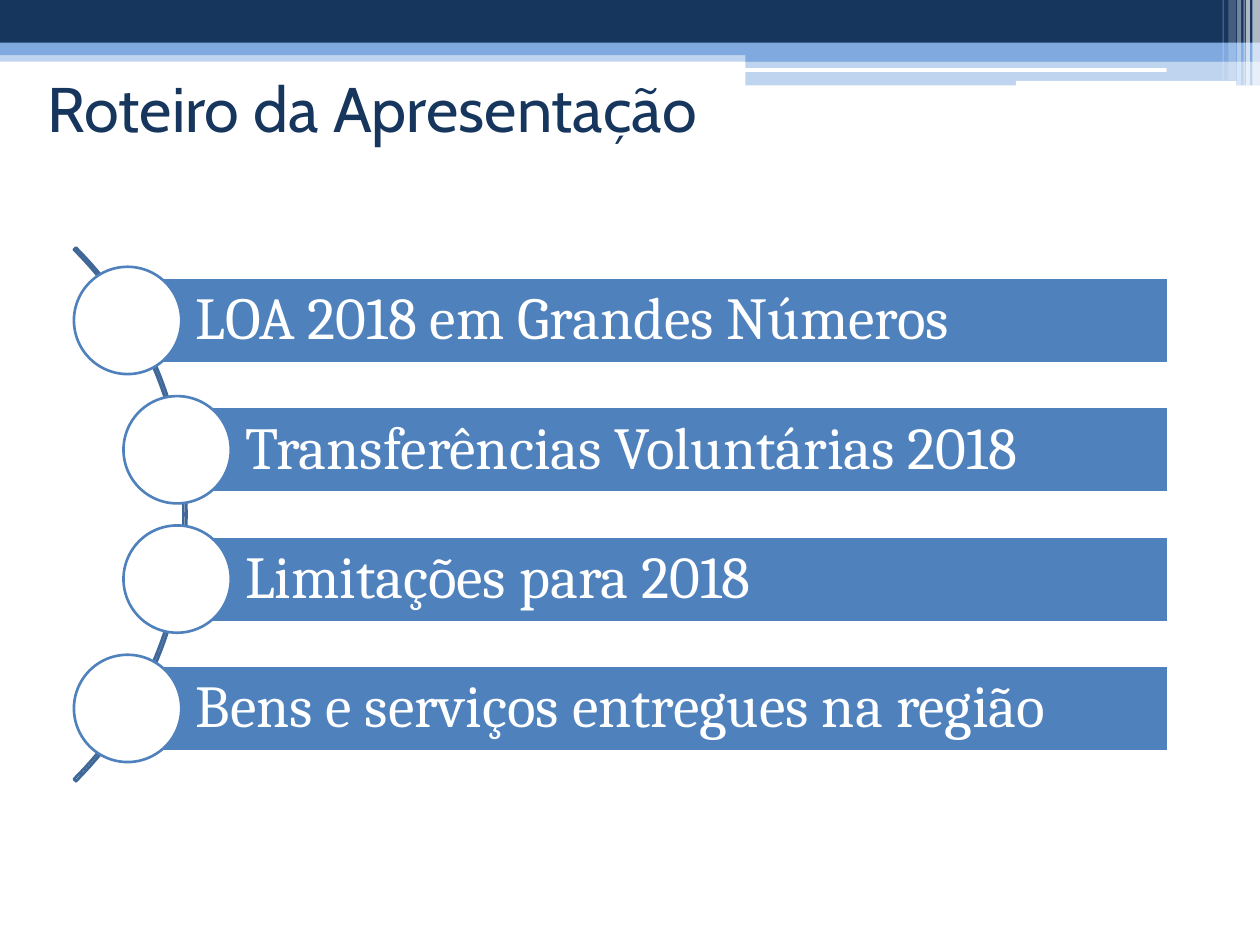
from dataclasses import dataclass

import lxml.etree
import pptx
import pptx.dml.color
import pptx.enum.shapes
import pptx.enum.text
import pptx.oxml.ns
import pptx.util

Pt = pptx.util.Pt
Kind = pptx.enum.shapes.MSO_SHAPE


@dataclass(frozen=True)
class Theme:
    navy: str = "17365D"
    sky: str = "80AADF"
    blue: str = "4F81BD"
    arc: str = "3F6797"
    white: str = "FFFFFF"
    title_font: str = "Cabin"
    body_font: str = "Cambria"
    title_size: float = 36
    body_size: float = 34
    line_width: float = 1.5


THEME = Theme()


@dataclass(frozen=True)
class Band:
    left: float
    top: float
    width: float
    height: float
    color: str
    opacity: int = 100
    kind: int = Kind.RECTANGLE


@dataclass(frozen=True)
class Topic:
    text: str
    center_x: float


HEADER = [
    Band(0, 28.8, 720, 6.5, THEME.sky, 50),
    Band(0, 0, 720, 24.5, THEME.navy),
    Band(0, 24.4, 720, 7.2, THEME.sky),
    Band(426, 28, 294, 7.2, THEME.sky),
    Band(426, 34.6, 294, 14.2, THEME.sky, 50),
    Band(425.5, 39, 241.2, 2.1, THEME.white, kind=Kind.ROUNDED_RECTANGLE),
    Band(580.5, 46.2, 126, 2.9, THEME.white, kind=Kind.ROUNDED_RECTANGLE),
]

# Left, width, height and opacity of the stripes at the right edge
STRIPES = [
    (715.7, 4.3, 49, 65),
    (712, 2.2, 49, 65),
    (710.6, 0.7, 49, 60),
    (707, 2.2, 49, 40),
    (702, 4.3, 46, 20),
    (698.6, 0.7, 46, 30),
]

TOPICS = [
    Topic("LOA 2018 em Grandes Números", 72.9),
    Topic("Transferências Voluntárias 2018", 101.2),
    Topic("Limitações para 2018", 101.2),
    Topic("Bens e serviços entregues na região", 72.9),
]

FIRST_CENTER_Y, ROW_PITCH = 183.1, 73.9
BAR_RIGHT, BAR_HEIGHT = 667.4, 49
CIRCLE_SIZE = 61.3
ARC_LEFT, ARC_SIZE = -324.7, 431.3


def rgb(color: str):
    return pptx.dml.color.RGBColor.from_string(color)


def add_box(slide, kind, left: float, top: float, width: float, height: float,
            fill: str | None = None, line: str | None = None, opacity: int = 100):
    box = slide.shapes.add_shape(kind, Pt(left), Pt(top), Pt(width), Pt(height))
    box.shadow.inherit = False
    if fill:
        box.fill.solid()
        box.fill.fore_color.rgb = rgb(fill)
    else:
        box.fill.background()
    if line:
        box.line.color.rgb = rgb(line)
        box.line.width = Pt(THEME.line_width)
    else:
        box.line.fill.background()
    if opacity < 100:
        color = box.fill._xPr.find(".//" + pptx.oxml.ns.qn("a:srgbClr"))
        alpha = lxml.etree.SubElement(color, pptx.oxml.ns.qn("a:alpha"))
        alpha.set("val", str(opacity * 1000))
    return box


def write_text(box, text: str, *, font: str, size: float, color: str,
               inset: float = 7.2, line_spacing: float = 1.0) -> None:
    frame = box.text_frame
    frame.word_wrap = True
    frame.auto_size = pptx.enum.text.MSO_AUTO_SIZE.NONE
    frame.vertical_anchor = pptx.enum.text.MSO_ANCHOR.MIDDLE
    frame.margin_left = Pt(inset)
    para = frame.paragraphs[0]
    para.alignment = pptx.enum.text.PP_ALIGN.LEFT
    para.line_spacing = line_spacing
    span = para.add_run()
    span.text = text
    span.font.name = font
    span.font.size = Pt(size)
    span.font.color.rgb = rgb(color)


def add_header(slide) -> None:
    stripes = [Band(left, 0, width, height, THEME.white, opacity)
               for left, width, height, opacity in STRIPES]
    for band in HEADER + stripes:
        add_box(slide, band.kind, band.left, band.top, band.width, band.height,
                fill=band.color, opacity=band.opacity)


def add_title(slide, text: str) -> None:
    title = slide.shapes.title
    title.left, title.top, title.width, title.height = Pt(20.2), Pt(37.4), Pt(669), Pt(48.2)
    write_text(title, text, font=THEME.title_font, size=THEME.title_size, color=THEME.navy)


def add_arc(slide) -> None:
    center_y = FIRST_CENTER_Y + ROW_PITCH * (len(TOPICS) - 1) / 2
    arc = add_box(slide, Kind.BLOCK_ARC, ARC_LEFT, center_y - ARC_SIZE / 2,
                  ARC_SIZE, ARC_SIZE, line=THEME.arc)
    # Start angle, end angle and thickness
    for index, value in enumerate((189, 27, 0.004)):
        arc.adjustments[index] = value


def add_topic(slide, topic: Topic, center_y: float) -> None:
    bar = add_box(slide, Kind.RECTANGLE, topic.center_x, center_y - BAR_HEIGHT / 2,
                  BAR_RIGHT - topic.center_x, BAR_HEIGHT,
                  fill=THEME.blue, line=THEME.white)
    write_text(bar, topic.text, font=THEME.body_font, size=THEME.body_size,
               color=THEME.white, inset=38.9, line_spacing=0.9)
    add_box(slide, Kind.OVAL, topic.center_x - CIRCLE_SIZE / 2,
            center_y - CIRCLE_SIZE / 2, CIRCLE_SIZE, CIRCLE_SIZE,
            fill=THEME.white, line=THEME.blue)


def main() -> None:
    deck = pptx.Presentation()
    deck.slide_width, deck.slide_height = Pt(720), Pt(540)
    page = deck.slides.add_slide(deck.slide_layouts[5])  # title only

    # Header and title
    add_header(page)
    add_title(page, "Roteiro da Apresentação")

    # Agenda along the arc
    add_arc(page)
    for row, topic in enumerate(TOPICS):
        add_topic(page, topic, FIRST_CENTER_Y + row * ROW_PITCH)

    deck.save("out.pptx")


if __name__ == "__main__":
    main()
